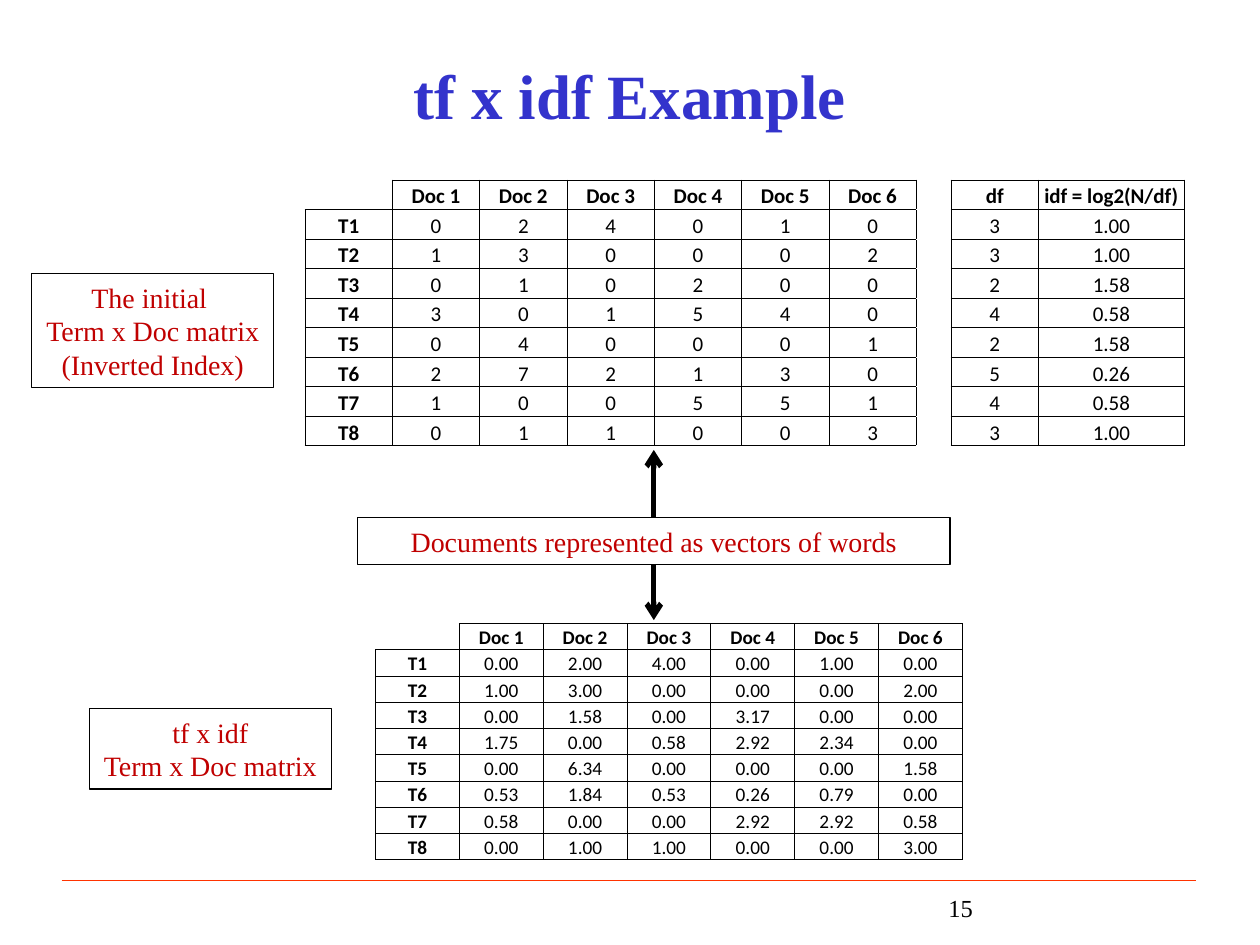
from math import log2

from lxml import etree
from pptx import Presentation
from pptx.dml.color import RGBColor
from pptx.enum import shapes, text
from pptx.oxml.ns import qn
from pptx.util import Cm, Pt

BLACK = RGBColor(0x00, 0x00, 0x00)
WHITE = RGBColor(0xFF, 0xFF, 0xFF)
BLUE = RGBColor(0x33, 0x33, 0xCC)
RED = RGBColor(0xC0, 0x00, 0x00)
ORANGE = RGBColor(0xFF, 0x33, 0x00)
SERIF, SANS = "Times New Roman", "Calibri"
MID, LEFT = text.PP_ALIGN.CENTER, text.PP_ALIGN.LEFT

COUNTS = [
    [0, 2, 4, 0, 1, 0],
    [1, 3, 0, 0, 0, 2],
    [0, 1, 0, 2, 0, 0],
    [3, 0, 1, 5, 4, 0],
    [0, 4, 0, 0, 0, 1],
    [2, 7, 2, 1, 3, 0],
    [1, 0, 0, 5, 5, 1],
    [0, 1, 1, 0, 0, 3],
]
DOCS = [f"Doc {n}" for n in range(1, 7)]


def write(frame, words, size, color, face=SERIF, bold=False, align=MID):
    """Put one styled paragraph into a text frame."""
    para = frame.paragraphs[0]
    para.text = words
    para.alignment = align
    font = para.font
    font.size, font.name, font.bold = Pt(size), face, bold
    font.color.rgb = color
    if not words:
        para._p.get_or_add_endParaRPr().set("sz", str(size * 100))


def add_label(slide, area, words, size, color, **style):
    """Add a plain text box."""
    box = slide.shapes.add_textbox(*map(Cm, area))
    box.text_frame.word_wrap = True
    box.text_frame.vertical_anchor = text.MSO_ANCHOR.MIDDLE
    write(box.text_frame, words, size, color, **style)


def add_box(slide, area, words, wrap=False):
    """Add an outlined caption and return it."""
    box = slide.shapes.add_shape(shapes.MSO_SHAPE.RECTANGLE, *map(Cm, area))
    box.shadow.inherit = False
    box.fill.background()
    box.line.color.rgb = BLACK
    box.line.width = Pt(0.75)
    box.text_frame.word_wrap = wrap
    box.text_frame.auto_size = text.MSO_AUTO_SIZE.SHAPE_TO_FIT_TEXT
    write(box.text_frame, words, 16, RED)
    return box


def add_line(slide, ends, color, width):
    """Add a straight line without shadow and return it."""
    line = slide.shapes.add_connector(shapes.MSO_CONNECTOR.STRAIGHT, *map(Cm, ends))
    line.line.color.rgb = color
    line.line.width = Pt(width)
    etree.SubElement(line._element.spPr, qn("a:effectLst"))
    return line


def add_arrow(slide, box, side, ends):
    """Add an arrow that starts at one side of a box."""
    arrow = add_line(slide, ends, BLACK, 3)
    arrow.begin_connect(box, side)
    etree.SubElement(arrow.line._get_or_add_ln(), qn("a:tailEnd"), type="arrow")


def set_edges(cell, pale):
    """Draw the cell's four borders, white on the pale sides."""
    props = cell._tc.get_or_add_tcPr()
    for side in "LRTB":
        edge = etree.SubElement(props, qn(f"a:ln{side}"), w=str(Pt(0.5)))
        fill = etree.SubElement(edge, qn("a:solidFill"))
        color = WHITE if side in pale else BLACK
        etree.SubElement(fill, qn("a:srgbClr"), val=str(color))


def add_grid(slide, spot, widths, height, rows, size):
    """Add a bordered table whose empty cells look open."""
    frame = slide.shapes.add_table(
        len(rows), len(widths), *map(Cm, (*spot, sum(widths), height)))
    table = frame.table
    table.first_row = table.horz_banding = False
    for col, width in zip(table.columns, widths):
        col.width = Cm(width)
    for r, row in enumerate(rows):
        table.rows[r].height = Cm(height / len(rows))
        for c, words in enumerate(row):
            cell = table.cell(r, c)
            cell.margin_left = cell.margin_right = cell.margin_top = Cm(0.02)
            cell.margin_bottom = 0
            cell.vertical_anchor = text.MSO_ANCHOR.BOTTOM
            set_edges(cell, "" if words else "TB" if c else "LT")
            cell.fill.background()
            write(cell.text_frame, words, size, BLACK, SANS, r == 0 or c == 0)


def make_rows():
    """Work out the rows of the count table and of the weight table."""
    first = [["", *DOCS, "", "df", "idf = log2(N/df)"]]
    second = [["", *DOCS]]
    for n, row in enumerate(COUNTS, 1):
        df = sum(count > 0 for count in row)
        idf = log2(len(DOCS) / df)
        first.append([f"T{n}", *map(str, row), "", str(df), f"{idf:.2f}"])
        second.append([f"T{n}", *(f"{count * idf:.2f}" for count in row)])
    return first, second


def main():
    """Build the slide and save it."""
    deck = Presentation()
    deck.slide_width, deck.slide_height = Cm(25.4), Cm(19.05)
    slide = deck.slides.add_slide(deck.slide_layouts[6])
    first, second = make_rows()

    add_line(slide, (1.24, 17.75, 24.1, 17.75), ORANGE, 1)
    add_label(slide, (1.9, 0.85, 21.6, 2.1), "tf x idf Example", 36, BLUE, bold=True)
    add_label(slide, (18.87, 17.9, 5.28, 0.8), "15", 14, BLACK, align=LEFT)

    add_grid(slide, (6.15, 3.63), [1.76] * 7 + [0.7, 1.77, 2.93], 5.36, first, 12)
    add_grid(slide, (7.57, 12.57), [1.69] * 7, 4.77, second, 11)

    add_box(slide, (0.64, 5.51, 4.88, 2.31),
            "The initial \nTerm x Doc matrix\n(Inverted Index)")
    add_box(slide, (1.8, 14.28, 4.88, 1.63), "tf x idf\nTerm x Doc matrix")
    note = add_box(slide, (7.21, 10.44, 11.94, 0.94),
                   "Documents represented as vectors of words", True)
    add_arrow(slide, note, 0, (13.18, 10.44, 13.18, 9.07))
    add_arrow(slide, note, 2, (13.18, 11.38, 13.18, 12.5))

    deck.save("out.pptx")


if __name__ == "__main__":
    main()
